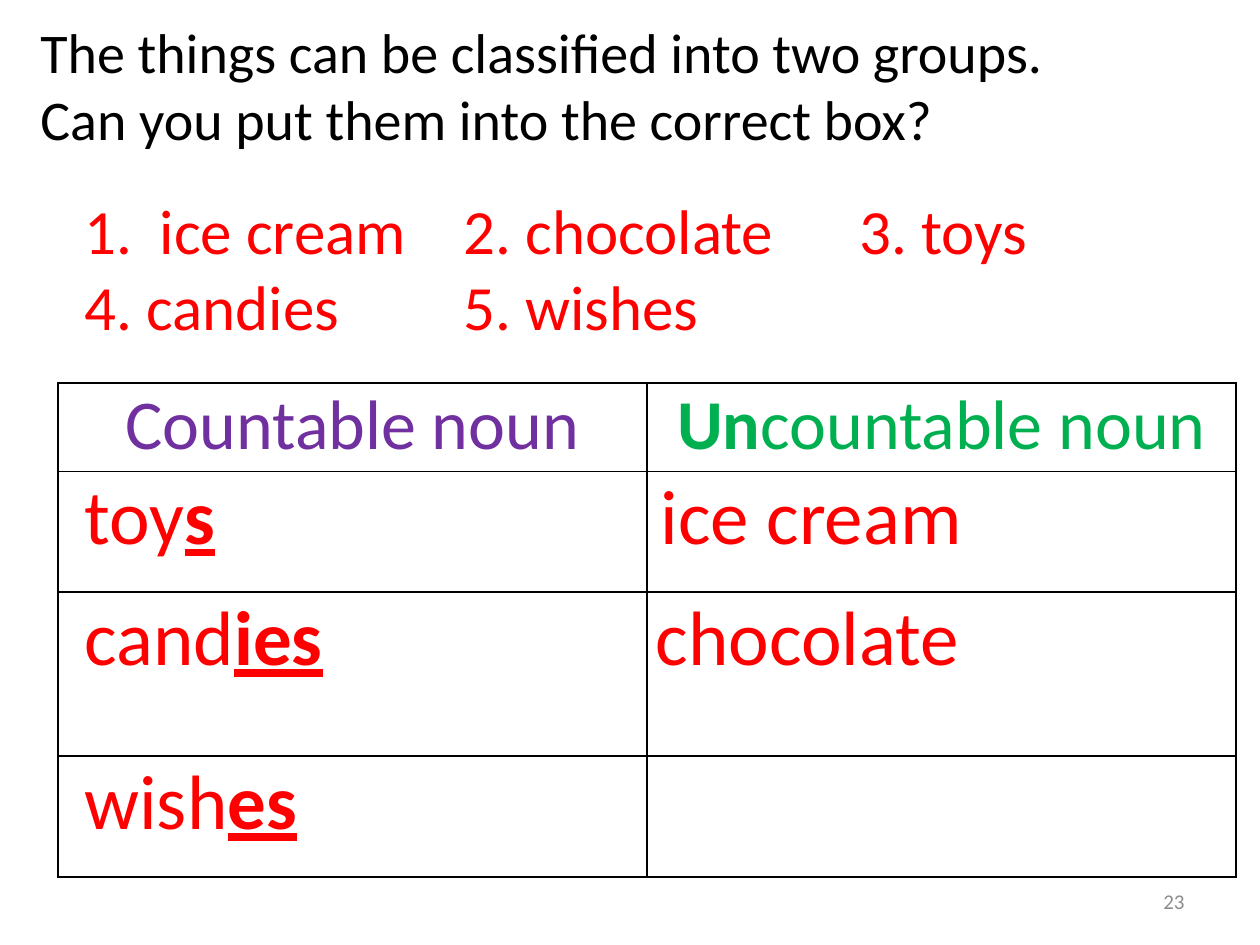
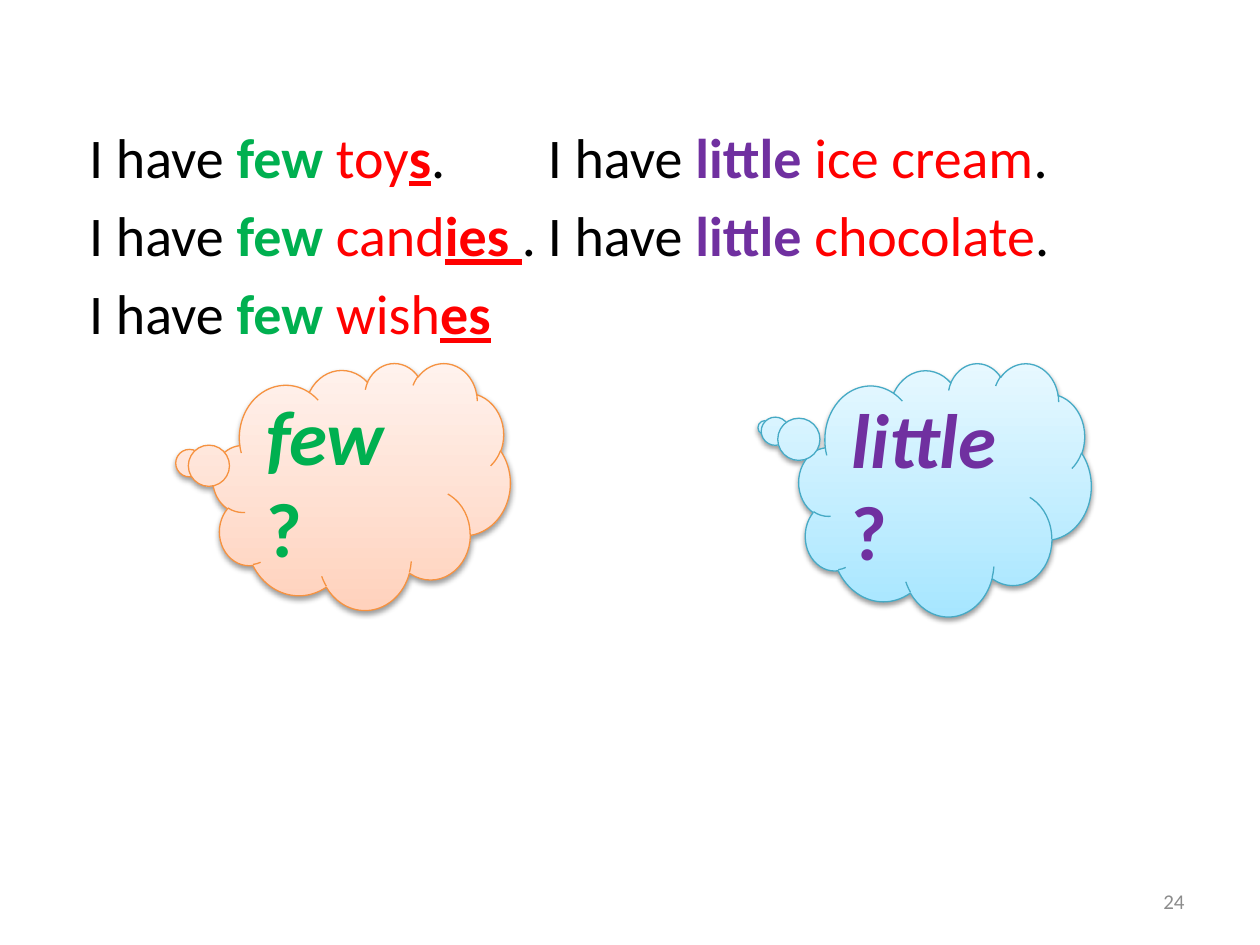
from lxml.etree import SubElement
from pptx import Presentation
from pptx.dml.color import RGBColor
from pptx.enum.shapes import MSO_SHAPE as Shape
from pptx.enum.text import MSO_ANCHOR as Anchor, MSO_AUTO_SIZE as AutoSize, PP_ALIGN as Align
from pptx.oxml.ns import qn
from pptx.util import Inches, Pt

FONT = "Calibri"
BLACK, RED, GREEN, PURPLE, GREY = "000000", "FF0000", "00B050", "7030A0", "8C8C8C"
FIRST_NUMBER = 23


def rgb(hex_color):
    return RGBColor.from_string(hex_color)


def write(para, size, *spans, align=Align.LEFT, tabs=()):
    """Fill a paragraph with (text, colour, marks) spans; marks are b, i and u."""
    para.alignment = align
    if tabs:
        tab_list = SubElement(para._p.get_or_add_pPr(), qn("a:tabLst"))
        for stop in tabs:
            SubElement(tab_list, qn("a:tab"), pos=str(Inches(stop)), algn="l")
    for text, color, marks in spans:
        span = para.add_run()
        span.text = text
        span.font.name, span.font.size = FONT, Pt(size)
        span.font.color.rgb = rgb(color)
        span.font.bold = "b" in marks
        span.font.italic = "i" in marks
        span.font.underline = "u" in marks


deck = Presentation()
deck.slide_width, deck.slide_height = Inches(10), Inches(7.5)

# Slide 1: sorting the nouns
page = deck.slides.add_slide(deck.slide_layouts[5])
title = page.shapes.title
title.left, title.top = Inches(0.22), Inches(0.09)
title.width, title.height = Inches(9.2), Inches(1.38)
frame = title.text_frame
frame.auto_size = AutoSize.NONE
frame.vertical_anchor = Anchor.TOP
write(frame.paragraphs[0], 32, ("The things can be classified into two groups.", BLACK, ""))
write(frame.add_paragraph(), 32, ("Can you put them into the correct box?", BLACK, ""))

# Words to sort
box = page.shapes.add_textbox(Inches(0.57), Inches(1.47), Inches(8.82), Inches(1.31))
frame = box.text_frame
frame.word_wrap = True
word_tabs = (0.6, 3.01, 6.15)
write(frame.paragraphs[0], 36, ("1.\tice cream\t2. chocolate\t3. toys", RED, ""), tabs=word_tabs)
write(frame.add_paragraph(), 36, ("4. candies\t5. wishes", RED, ""), tabs=word_tabs)

# Noun table, ending above the page number: left margin and spans of each cell
row_heights = (0.7, 0.96, 1.3, 0.96)
noun_rows = [
    [(0.07, [("Countable noun", PURPLE, "")]),
     (0.07, [("Un", GREEN, "b"), ("countable noun", GREEN, "")])],
    [(0.21, [("toy", RED, ""), ("s", RED, "bu")]), (0.11, [("ice cream", RED, "")])],
    [(0.21, [("cand", RED, ""), ("ies", RED, "bu")]), (0.07, [("chocolate", RED, "")])],
    [(0.21, [("wish", RED, ""), ("es", RED, "bu")]), (0.07, [])],
]
table = page.shapes.add_table(4, 2, Inches(0.46), Inches(3.04), Inches(9.35),
                              Inches(sum(row_heights))).table
table.first_row = table.horz_banding = False
for row_index, (height, cells) in enumerate(zip(row_heights, noun_rows)):
    table.rows[row_index].height = Inches(height)
    for column_index, (margin, spans) in enumerate(cells):
        cell = table.cell(row_index, column_index)
        cell.margin_left, cell.margin_right = Inches(margin), Inches(0.07)
        cell.margin_top = cell.margin_bottom = 0
        for side in ("lnL", "lnR", "lnT", "lnB"):
            border = SubElement(cell._tc.get_or_add_tcPr(), qn(f"a:{side}"), w=str(Pt(1)))
            SubElement(SubElement(border, qn("a:solidFill")), qn("a:srgbClr"), val=BLACK)
        cell.fill.background()
        is_header = row_index == 0
        write(cell.text_frame.paragraphs[0], 40 if is_header else 44, *spans,
              align=Align.CENTER if is_header else Align.LEFT)

# Slide 2: few and little
page = deck.slides.add_slide(deck.slide_layouts[6])
box = page.shapes.add_textbox(Inches(0.61), Inches(0.92), Inches(8.9), Inches(4.95))
frame = box.text_frame
frame.word_wrap = True
few_nouns = [("toy", "s", "."), ("cand", "ies ", "."), ("wish", "es", "")]
little_nouns = ["ice cream", "chocolate", None]
for index, ((stem, ending, stop), mass_noun) in enumerate(zip(few_nouns, little_nouns)):
    para = frame.add_paragraph() if index else frame.paragraphs[0]
    para.space_after = Pt(6.4)
    spans = [("I have ", BLACK, ""), ("few ", GREEN, "b"), (stem, RED, ""), (ending, RED, "bu")]
    if mass_noun:
        spans += [(stop + "\tI have ", BLACK, ""), ("little ", PURPLE, "b"),
                  (mass_noun, RED, ""), (".", BLACK, "")]
    write(para, 32, *spans, tabs=(3.64,))

# Thought clouds: left, width, height, tail, gradient from bottom to top, line, spans
clouds = [
    (6.34, 2.32, 2.01, (-0.616, -0.244), ("A7E6FF", "E7F8FF"), "46AAC5",
     [("little", PURPLE, "bi"), (" ?", PURPLE, "b")]),
    (1.69, 2.36, 1.96, (-0.599, -0.097), ("FFD2BD", "FFF2ED"), "F69240",
     [("few ", GREEN, "bi"), ("?", GREEN, "b")]),
]
for left, width, height, tail, gradient, line_color, spans in clouds:
    cloud = page.shapes.add_shape(Shape.CLOUD_CALLOUT, Inches(left), Inches(2.88),
                                  Inches(width), Inches(height))
    cloud.adjustments[0], cloud.adjustments[1] = tail
    cloud.fill.gradient()
    cloud.fill.gradient_angle = 90
    for stop, color in zip(cloud.fill.gradient_stops, gradient):
        stop.color.rgb = rgb(color)
    cloud.line.color.rgb = rgb(line_color)
    cloud.line.width = Pt(0.75)
    # Soft shadow below the cloud
    cloud.shadow.inherit = False
    effects = cloud._element.spPr.find(qn("a:effectLst"))
    shadow = SubElement(effects, qn("a:outerShdw"), blurRad=str(Pt(3.1)), dist=str(Pt(1.6)),
                        dir="5400000", rotWithShape="0")
    shade = SubElement(shadow, qn("a:srgbClr"), val=BLACK)
    SubElement(shade, qn("a:alpha"), val="38000")
    cloud.text_frame.word_wrap = True
    cloud.text_frame.vertical_anchor = Anchor.MIDDLE
    write(cloud.text_frame.paragraphs[0], 44, *spans)

# Page numbers
for number, page in enumerate(deck.slides, FIRST_NUMBER):
    box = page.shapes.add_textbox(Inches(7.17), Inches(6.95), Inches(2.33), Inches(0.4))
    box.text_frame.word_wrap = True
    box.text_frame.vertical_anchor = Anchor.MIDDLE
    write(box.text_frame.paragraphs[0], 12, (str(number), GREY, ""), align=Align.RIGHT)

deck.save("out.pptx")
